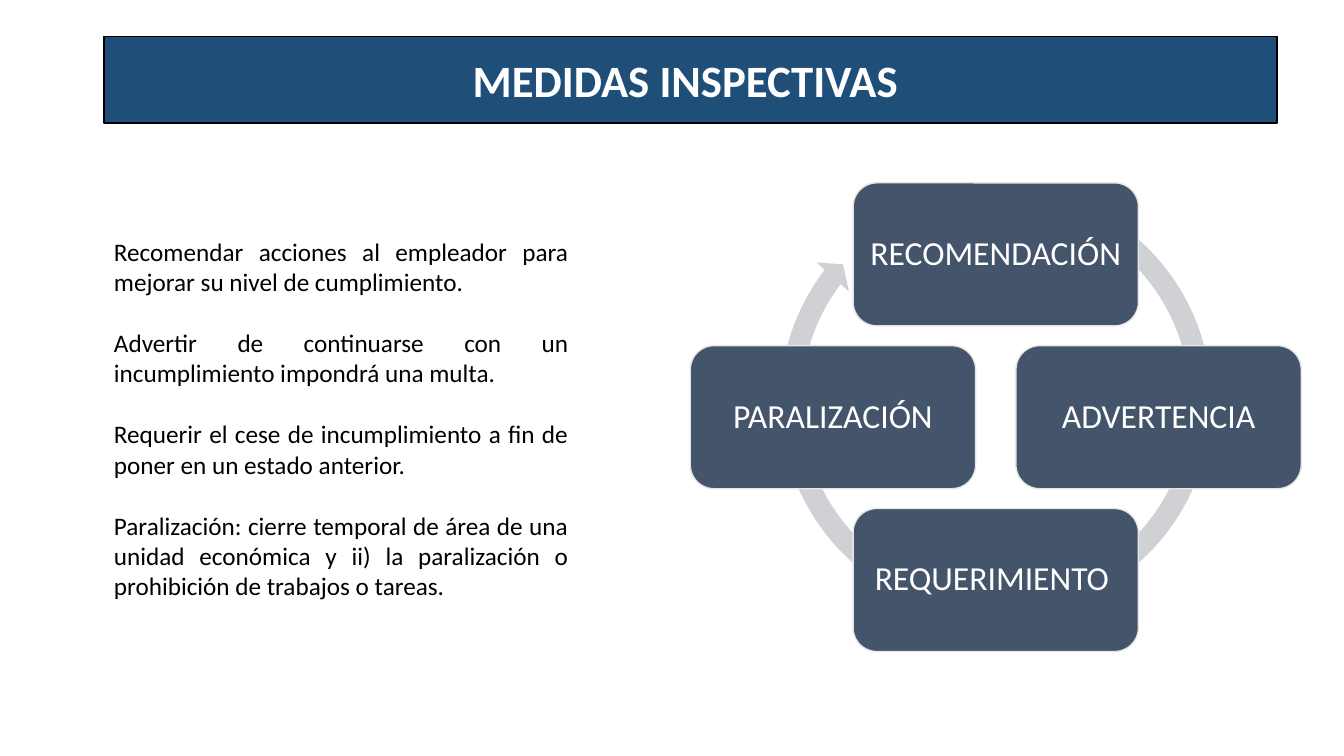
"""Build the slide on inspection measures: a title bar, four explanations and a cycle."""
from math import cos, radians, sin

from lxml.etree import SubElement
from pptx import Presentation
from pptx.dml.color import RGBColor
from pptx.enum.shapes import MSO_SHAPE
from pptx.enum.text import MSO_ANCHOR, MSO_AUTO_SIZE, PP_ALIGN
from pptx.oxml.ns import qn
from pptx.util import Pt

TITLE = "MEDIDAS INSPECTIVAS "
EXPLANATIONS = [
    "Recomendar acciones al empleador para mejorar su nivel de cumplimiento.",
    "Advertir de continuarse con un incumplimiento impondrá una multa.",
    "Requerir el cese de incumplimiento a fin de poner en un estado anterior.",
    "Paralización: cierre temporal de área de una unidad económica y ii) la "
    "paralización o prohibición de trabajos o tareas.",
]
MEASURES = ["RECOMENDACIÓN", "ADVERTENCIA", "REQUERIMIENTO ", "PARALIZACIÓN"]

COLORS = {
    "title_bar": "1F4E79", "black": "000000", "white": "FFFFFF",
    "node": "44546A", "node_line": "E7E6E6", "arrow": "CFD1D4",
}
FONT = "Calibri"
TITLE_BOX = (74.2, 26, 838, 62)
BODY_BOX = (74.2, 165, 339, 211)
CYCLE_CENTER = (711.3, 298)
CYCLE_RADIUS = 116.3
NODE_SIZE = (203.8, 102.2)
ARROW_BOX = (549.3, 124.6, 324, 324)
ARROW_ADJUSTMENTS = (0.047, 2.729, 130.388, 178.911, 0.048)


def color(name):
    return RGBColor.from_string(COLORS[name])


def place(shape, box):
    shape.left, shape.top, shape.width, shape.height = map(Pt, box)


def paint(shape, fill, line=None):
    shape.fill.solid()
    shape.fill.fore_color.rgb = color(fill)
    if line:
        shape.line.color.rgb = color(line)
        shape.line.width = Pt(1)
    else:
        shape.line.fill.background()


def style(paragraph, size, font_color, alignment, bold=False):
    paragraph.alignment = alignment
    font = paragraph.font
    font.name, font.size, font.bold = FONT, Pt(size), bold
    font.color.rgb = color(font_color)


def add_title(slide):
    title = slide.shapes.title
    place(title, TITLE_BOX)
    paint(title, "title_bar", "black")
    frame = title.text_frame
    frame.text = TITLE
    frame.auto_size = MSO_AUTO_SIZE.NONE
    frame.vertical_anchor = MSO_ANCHOR.MIDDLE
    style(frame.paragraphs[0], 32, "white", PP_ALIGN.CENTER, bold=True)


def add_explanations(slide):
    body = slide.placeholders[1]
    place(body, BODY_BOX)
    frame = body.text_frame
    frame.text = "\n".join(EXPLANATIONS)
    frame.auto_size = MSO_AUTO_SIZE.NONE
    frame.vertical_anchor = MSO_ANCHOR.TOP
    for paragraph in frame.paragraphs:
        style(paragraph, 18, "black", PP_ALIGN.JUSTIFY)
        paragraph.space_before = Pt(0)
        paragraph.space_after = Pt(22)
        properties = paragraph._p.get_or_add_pPr()
        properties.set("marL", "0")
        properties.set("indent", "0")
        SubElement(properties, qn("a:buNone"))


def add_cycle(slide):
    arrow = slide.shapes.add_shape(MSO_SHAPE.CIRCULAR_ARROW, *map(Pt, ARROW_BOX))
    arrow.shadow.inherit = False
    paint(arrow, "arrow")
    for index, value in enumerate(ARROW_ADJUSTMENTS):
        arrow.adjustments[index] = value

    width, height = NODE_SIZE
    for index, measure in enumerate(MEASURES):
        angle = radians(360 / len(MEASURES) * index - 90)
        left = CYCLE_CENTER[0] + CYCLE_RADIUS * cos(angle) - width / 2
        top = CYCLE_CENTER[1] + CYCLE_RADIUS * sin(angle) - height / 2
        node = slide.shapes.add_shape(
            MSO_SHAPE.ROUNDED_RECTANGLE, *map(Pt, (left, top, width, height)))
        node.shadow.inherit = False
        paint(node, "node", "node_line")
        frame = node.text_frame
        frame.text = measure
        frame.word_wrap = True
        frame.margin_left = frame.margin_right = Pt(4)
        frame.vertical_anchor = MSO_ANCHOR.MIDDLE
        style(frame.paragraphs[0], 24, "white", PP_ALIGN.CENTER)
        frame.paragraphs[0].line_spacing = 0.9


def main():
    presentation = Presentation()
    presentation.slide_width, presentation.slide_height = Pt(960), Pt(540)
    slide = presentation.slides.add_slide(presentation.slide_layouts[1])
    add_title(slide)
    add_explanations(slide)
    add_cycle(slide)
    presentation.save("out.pptx")


if __name__ == "__main__":
    main()
